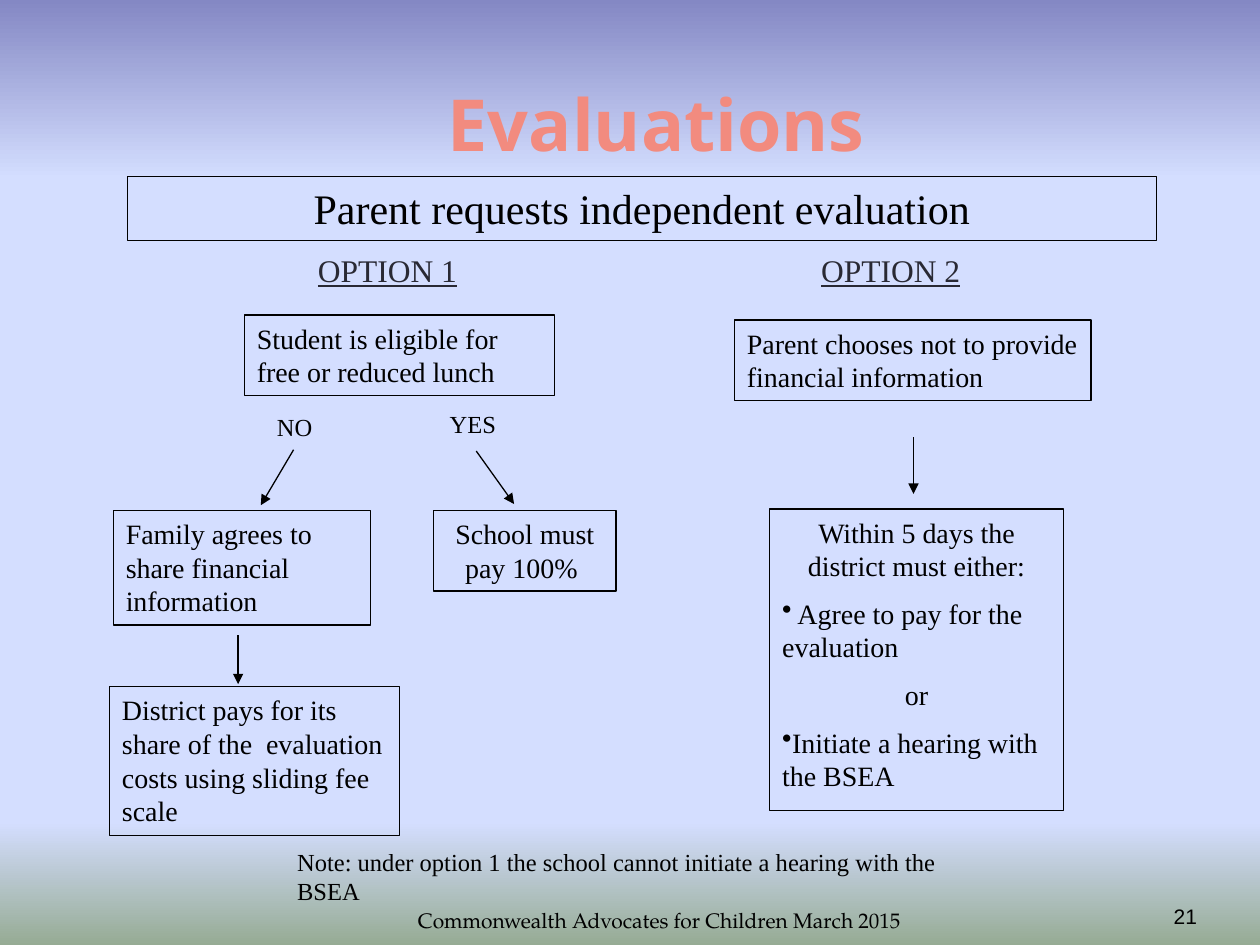
from lxml import etree
from pptx import Presentation
from pptx import util as u
from pptx.dml.color import RGBColor
from pptx.enum import shapes, text
from pptx.oxml.ns import qn

THEME = {
    "serif": "Times New Roman", "heading": "Open Sans",
    "footer": "TeX Gyre Pagella", "number": "Arial",
    "ink": "000000", "title": "F28B7F", "option": "292934",
    "title_size": 41, "banner_size": 24, "option_size": 18,
    "box_size": 16, "label_size": 14, "footer_size": 12,
    "line": 0.75, "gap": 8,
    "background": [(0, "8488C4"), (19, "D4DEFF"), (87, "D4DEFF"), (100, "96AB94")],
}
LEFT, CENTER, RIGHT = text.PP_ALIGN.LEFT, text.PP_ALIGN.CENTER, text.PP_ALIGN.RIGHT
TOP, BOTTOM = text.MSO_ANCHOR.TOP, text.MSO_ANCHOR.BOTTOM

TITLE = ("Evaluations", (0.71, 0.56, 9, 0.83))
BANNER = ("Parent requests independent evaluation", (1.01, 1.4, 8.17, 0.51))
STEPS = [
    ("Student is eligible for free or reduced lunch", (1.94, 2.5, 2.46, 0.64), LEFT),
    ("Parent chooses not to provide financial information", (5.83, 2.54, 2.83, 0.64), LEFT),
    ("Family agrees to share financial information", (0.9, 4.05, 2.04, 0.91), LEFT),
    ("School must pay 100% ", (3.44, 4.05, 1.45, 0.64), CENTER),
    ("District pays for its share of the  evaluation costs using sliding fee scale",
     (0.87, 5.45, 2.3, 1.18), LEFT),
]
CHOICES = [
    ("Within 5 days the district must either:", CENTER, False),
    (" Agree to pay for the evaluation", LEFT, True),
    ("or", CENTER, False),
    ("Initiate a hearing with the BSEA", LEFT, True),
]
CHOICES_AT = (6.11, 4.04, 2.33, 2.39)
OPTIONS = [("OPTION 1", (2.37, 1.94, 1.41, 0.4)), ("OPTION 2", (6.39, 1.94, 1.36, 0.4))]
LABELS = [
    ("NO", (2.1, 3.22, 0.67, 0.34)),
    ("YES", (3.47, 3.2, 0.67, 0.34)),
    ("Note: under option 1 the school cannot initiate a hearing with the BSEA",
     (2.26, 6.67, 5.75, 0.33)),
]
FOOTER = ("Commonwealth Advocates for Children March 2015", (3.08, 7.14, 4.17, 0.31))
NUMBER = ("21", (8.67, 7.02, 0.83, 0.4))
ARROWS = [
    ((7.25, 3.47), (7.25, 3.92)),
    ((1.89, 5.04), (1.89, 5.43)),
    ((3.78, 3.58), (4.08, 4)),
    ((2.33, 3.57), (2.07, 4.01)),
]


def inches(values):
    return [u.Inches(value) for value in values]


def style(para, size, font="serif", color="ink", align=LEFT):
    para.alignment = align
    para.font.name = THEME[font]
    para.font.size = u.Pt(THEME[size])
    para.font.color.rgb = RGBColor.from_string(THEME[color])


def add_text(page, words, at, size, font="serif", color="ink", align=LEFT, anchor=TOP):
    box = page.shapes.add_textbox(*inches(at))
    frame = box.text_frame
    frame.word_wrap = True
    frame.vertical_anchor = anchor
    frame.text = words
    style(frame.paragraphs[0], size, font, color, align)
    return box


def add_box(page, lines, at, size):
    box = page.shapes.add_shape(shapes.MSO_SHAPE.RECTANGLE, *inches(at))
    box.shadow.inherit = False
    box.fill.background()
    box.line.color.rgb = RGBColor.from_string(THEME["ink"])
    box.line.width = u.Pt(THEME["line"])
    frame = box.text_frame
    frame.word_wrap = True
    frame.vertical_anchor = TOP
    for index, (words, align, bullet) in enumerate(lines):
        para = frame.add_paragraph() if index else frame.paragraphs[0]
        para.text = words
        style(para, size, align=align)
        if index:
            para.space_before = u.Pt(THEME["gap"])
        if bullet:
            properties = para._p.get_or_add_pPr()
            mark = etree.Element(qn("a:buChar"), char="•")
            properties.insert_element_before(mark, "a:tabLst", "a:defRPr", "a:extLst")


def add_arrow(page, start, end):
    arrow = page.shapes.add_connector(
        shapes.MSO_CONNECTOR.STRAIGHT, *inches(start + end))
    arrow.line.color.rgb = RGBColor.from_string(THEME["ink"])
    arrow.line.width = u.Pt(THEME["line"])
    etree.SubElement(arrow.line._get_or_add_ln(), qn("a:tailEnd"), type="triangle")
    etree.SubElement(arrow._element.spPr, qn("a:effectLst"))


def paint_background(page):
    fill = page.background.fill
    fill.gradient()
    fill.gradient_angle = 270
    stops = page._element.find(".//" + qn("a:gsLst"))
    for stop in list(stops):
        stops.remove(stop)
    for position, color in THEME["background"]:
        stop = etree.SubElement(stops, qn("a:gs"), pos=str(position * 1000))
        etree.SubElement(stop, qn("a:srgbClr"), val=color)


def main():
    deck = Presentation()
    deck.slide_width, deck.slide_height = inches((10, 7.5))
    page = deck.slides.add_slide(deck.slide_layouts[5])
    paint_background(page)

    title = page.shapes.title
    words, at = TITLE
    title.left, title.top, title.width, title.height = inches(at)
    title.text_frame.text = words
    title.text_frame.vertical_anchor = text.MSO_ANCHOR.MIDDLE
    heading = title.text_frame.paragraphs[0]
    style(heading, "title_size", "heading", "title", CENTER)
    heading.font.bold = True

    words, at = BANNER
    add_box(page, [(words, CENTER, False)], at, "banner_size")
    for words, at, align in STEPS:
        add_box(page, [(words, align, False)], at, "box_size")
    add_box(page, CHOICES, CHOICES_AT, "box_size")

    for words, at in OPTIONS:
        option = add_text(page, words, at, "option_size", color="option", align=CENTER)
        option.text_frame.word_wrap = False
        option.text_frame.paragraphs[0].font.underline = True
    for words, at in LABELS:
        add_text(page, words, at, "label_size")
    for start, end in ARROWS:
        add_arrow(page, start, end)

    add_text(page, *FOOTER, "footer_size", "footer", align=RIGHT, anchor=BOTTOM)
    number = add_text(page, *NUMBER, "footer_size", "number", align=RIGHT, anchor=BOTTOM)
    number.text_frame.margin_left = number.text_frame.margin_right = 0

    deck.save("out.pptx")


if __name__ == "__main__":
    main()
